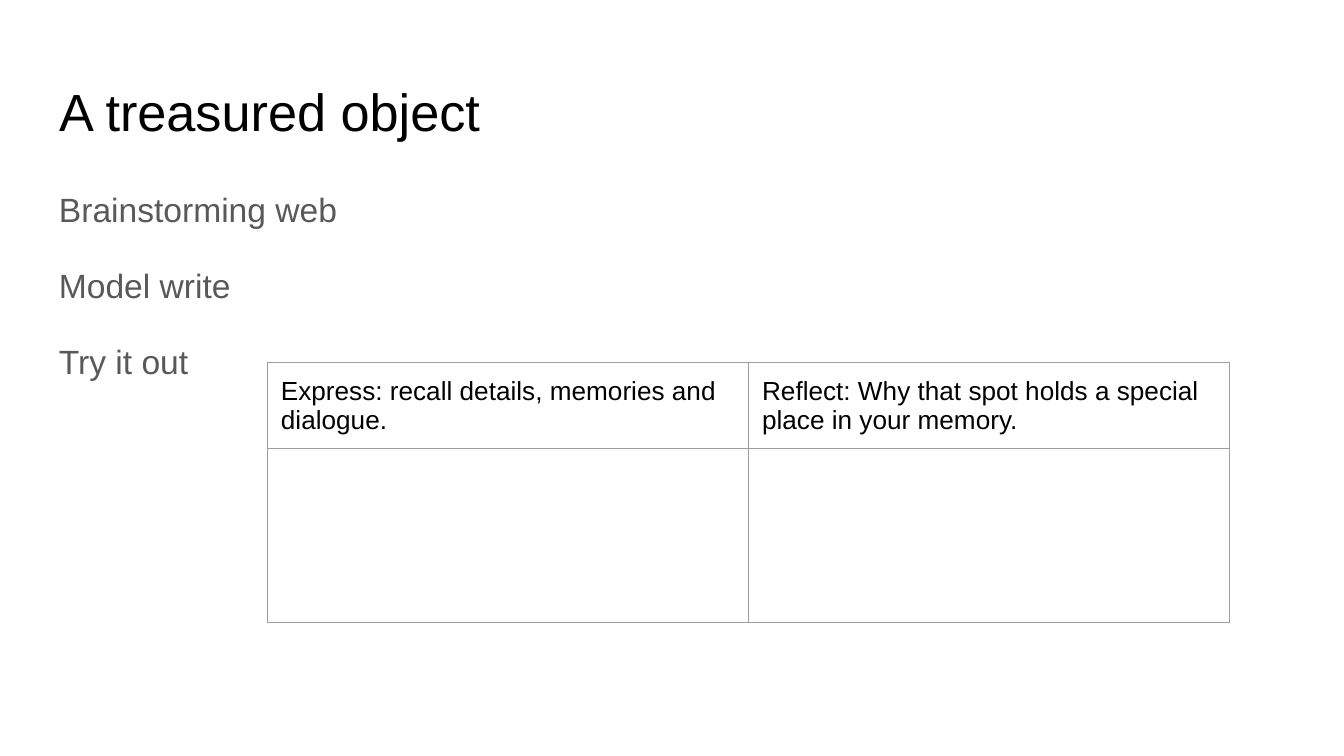
from lxml.etree import SubElement
from pptx import Presentation
from pptx.dml.color import RGBColor
from pptx.enum.text import MSO_ANCHOR, MSO_AUTO_SIZE, PP_ALIGN
from pptx.oxml.ns import qn
from pptx.util import Inches, Pt

BLACK = RGBColor(0x00, 0x00, 0x00)
GRAY = RGBColor(0x59, 0x59, 0x59)
RULE = RGBColor(0x9E, 0x9E, 0x9E)

WIDE = Inches(10)
PAD = Inches(0.1)
SIDES = ("left", "right", "top", "bottom")
CELL = {f"margin_{side}": PAD for side in SIDES}
FRAME = {"word_wrap": True, "auto_size": MSO_AUTO_SIZE.NONE,
         "vertical_anchor": MSO_ANCHOR.TOP, **CELL}
TITLE = {"alignment": PP_ALIGN.LEFT, "line_spacing": 1.0}
BODY = {"line_spacing": 1.15, "space_after": Pt(16)}

STEPS = ["Brainstorming web", "Model write", "Try it out"]
HEADS = ["Express: recall details, memories and dialogue.",
         "Reflect: Why that spot holds a special place in your memory."]


def apply(item, form):
    """Set each attribute named in a format dict."""
    for name, value in form.items():
        setattr(item, name, value)


def write(frame, lines, size, color, form):
    """Fill a text frame with one paragraph per line."""
    frame.text = "\n".join(lines)
    for para in frame.paragraphs:
        apply(para, form)
        apply(para.font, {"name": "Arial", "size": Pt(size)})
        para.font.color.rgb = color


def place(shape, left, top, width, height):
    """Position a shape by lengths in inches."""
    apply(shape, {"left": Inches(left), "top": Inches(top),
                  "width": Inches(width), "height": Inches(height)})


def add_title(slide, text):
    """Format the title placeholder."""
    title = slide.shapes.title
    place(title, 0.34, 0.49, 9.32, 0.63)
    apply(title.text_frame, FRAME)
    write(title.text_frame, [text], 28, BLACK, TITLE)


def add_steps(slide, lines):
    """Add the list of lesson steps."""
    box = slide.shapes.add_textbox(0, 0, 0, 0)
    place(box, 0.34, 1.26, 9.32, 3.74)
    apply(box.text_frame, FRAME)
    write(box.text_frame, lines, 18, GRAY, BODY)


def add_rules(cell):
    """Draw a thin border on all four sides of a cell."""
    props = cell._tc.get_or_add_tcPr()
    for index, tag in enumerate(("a:lnL", "a:lnR", "a:lnT", "a:lnB")):
        line = props.makeelement(qn(tag), {"w": str(Pt(0.75))})
        props.insert(index, line)
        fill = SubElement(line, qn("a:solidFill"))
        SubElement(fill, qn("a:srgbClr"), val=str(RULE))


def add_grid(slide, heads):
    """Add the writing table with headings over empty cells."""
    table = slide.shapes.add_table(
        2, len(heads), Inches(1.99), Inches(2.7),
        Inches(7.16), Inches(1.93)).table
    apply(table, {"first_row": False, "horz_banding": False})
    for row, height in zip(table.rows, (0.64, 1.29)):
        row.height = Inches(height)
    for cell in table.iter_cells():
        apply(cell, CELL)
        cell.fill.background()
        add_rules(cell)
    for col, head in enumerate(heads):
        write(table.cell(0, col).text_frame, [head], 14, BLACK, {})


def main():
    """Build and save the widescreen slide."""
    deck = Presentation()
    apply(deck, {"slide_width": WIDE, "slide_height": WIDE * 9 // 16})
    slide = deck.slides.add_slide(deck.slide_layouts[5])
    add_title(slide, "A treasured object")
    add_steps(slide, STEPS)
    add_grid(slide, HEADS)
    deck.save("out.pptx")


if __name__ == "__main__":
    main()
